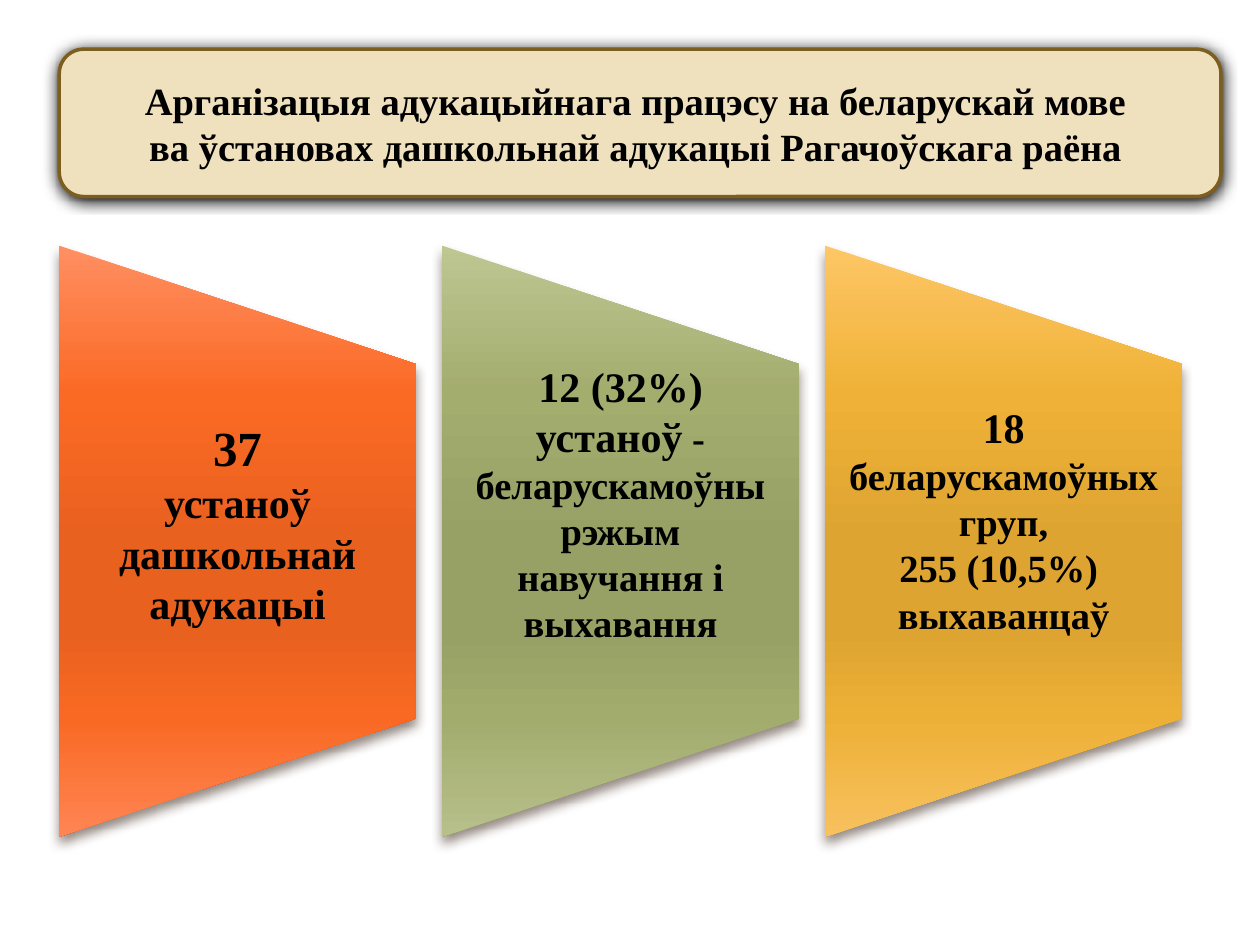
from dataclasses import dataclass

from lxml import etree
from pptx import Presentation
from pptx.dml.color import RGBColor
from pptx.enum.shapes import MSO_SHAPE
from pptx.enum.text import MSO_ANCHOR, PP_ALIGN
from pptx.oxml import parse_xml
from pptx.oxml.ns import nsdecls, qn
from pptx.util import Inches, Pt

ROUNDED = MSO_SHAPE.ROUNDED_RECTANGLE
TRAPEZOID = MSO_SHAPE.FLOWCHART_MANUAL_OPERATION
MIDDLE = MSO_ANCHOR.MIDDLE
CENTER = PP_ALIGN.CENTER


@dataclass(frozen=True)
class Theme:
    font: str = "Times New Roman"
    ink: str = "000000"
    banner_fill: str = "EFE0BE"
    banner_line: str = "7C5F1E"
    banner_shadow: tuple = ("000000", 100, 8.5, 1)
    panel_shadow: tuple = ("4E3B30", 60, 6, 4)
    stops: tuple = (0, 25, 50, 65, 80, 100)
    orange: tuple = ("FF8F62", "FB6A25", "E9611F", "E9611F", "F96924", "FF8554")
    green: tuple = ("BEC692", "A3AD6E", "97A065", "97A065", "A2AC6D", "B7BF8B")
    amber: tuple = ("FEC766", "EFB137", "DEA431", "DEA431", "EDB037", "F8C15E")
    body: int = 22
    lead: int = 24
    big: int = 28


THEME = Theme()
SLIDE_W, SLIDE_H = 10, 7.5
LEFT, PITCH = 0.47, 3.04
PANEL_TOP, PANEL_W, PANEL_H = 1.95, 2.83, 4.69

TITLE = [
    [("Арганізацыя адукацыйнага працэсу на беларускай мове ", THEME.body)],
    [("ва ўстановах дашкольнай адукацыі Рагачоўскага раёна ", THEME.body)],
]
PANELS = [
    (THEME.orange, 0.19, 0.29, [
        [("37", THEME.big)],
        [("устаноў дашкольнай адукацыі", THEME.lead)],
    ]),
    (THEME.green, 0.17, 0.61, [
        [("12 (32%) устаноў", THEME.lead),
         (" - беларускамоўны рэжым навучання і выхавання", THEME.body)],
    ]),
    (THEME.amber, 0.17, 0.35, [
        [("18", THEME.lead)],
        [("беларускамоўных груп,", THEME.body)],
        [("255 (10,5%) ", THEME.body)],
        [("выхаванцаў", THEME.body)],
    ]),
]


def write(tf, paragraphs):
    tf.word_wrap = True
    tf.vertical_anchor = MIDDLE
    for i, runs in enumerate(paragraphs):
        p = tf.paragraphs[0] if i == 0 else tf.add_paragraph()
        p.alignment = CENTER
        for text, size in runs:
            r = p.add_run()
            r.text = text
            r.font.name = THEME.font
            r.font.size = Pt(size)
            r.font.bold = True
            r.font.color.rgb = RGBColor.from_string(THEME.ink)


def add_shadow(sp, color, alpha, blur, dist):
    sp.shadow.inherit = False
    effects = sp._element.spPr.find(qn("a:effectLst"))
    outer = etree.SubElement(
        effects, qn("a:outerShdw"), blurRad=str(Pt(blur)), dist=str(Pt(dist)),
        dir="5400000", algn="ctr", rotWithShape="0")
    clr = etree.SubElement(outer, qn("a:srgbClr"), val=color)
    etree.SubElement(clr, qn("a:alpha"), val=str(alpha * 1000))


def fill_gradient(sp, colors):
    sp.fill.gradient()
    old = sp._element.spPr.find(qn("a:gradFill"))
    stops = "".join(
        f'<a:gs pos="{pos * 1000}"><a:srgbClr val="{color}"/></a:gs>'
        for pos, color in zip(THEME.stops, colors))
    new = parse_xml(
        f'<a:gradFill {nsdecls("a")} rotWithShape="0"><a:gsLst>{stops}</a:gsLst>'
        '<a:lin ang="5400000" scaled="0"/></a:gradFill>')
    old.getparent().replace(old, new)


def add_banner(shapes, x, y, w, h):
    sp = shapes.add_shape(ROUNDED, Inches(x), Inches(y), Inches(w), Inches(h))
    sp.fill.solid()
    sp.fill.fore_color.rgb = RGBColor.from_string(THEME.banner_fill)
    sp.line.color.rgb = RGBColor.from_string(THEME.banner_line)
    sp.line.width = Pt(2)
    add_shadow(sp, *THEME.banner_shadow)
    write(sp.text_frame, TITLE)


def add_panel(shapes, x, y, w, h, colors, side, bottom, paragraphs):
    turn = (h - w) / 2
    sp = shapes.add_shape(TRAPEZOID, Inches(x - turn), Inches(y + turn),
                          Inches(h), Inches(w))
    sp.rotation = 270
    sp.line.fill.background()
    fill_gradient(sp, colors)
    add_shadow(sp, *THEME.panel_shadow)

    box = shapes.add_textbox(Inches(x), Inches(y + h / 5), Inches(w), Inches(h * 3 / 5))
    tf = box.text_frame
    tf.margin_left = tf.margin_right = Inches(side)
    tf.margin_top, tf.margin_bottom = 0, Inches(bottom)
    write(tf, paragraphs)


def main():
    prs = Presentation()
    prs.slide_width, prs.slide_height = Inches(SLIDE_W), Inches(SLIDE_H)
    s = prs.slides.add_slide(prs.slide_layouts[6])
    add_banner(s.shapes, LEFT, 0.39, 9.22, 1.17)
    group = s.shapes.add_group_shape()
    for col, panel in enumerate(PANELS):
        add_panel(group.shapes, LEFT + col * PITCH, PANEL_TOP, PANEL_W, PANEL_H, *panel)
    prs.save("out.pptx")


if __name__ == "__main__":
    main()
